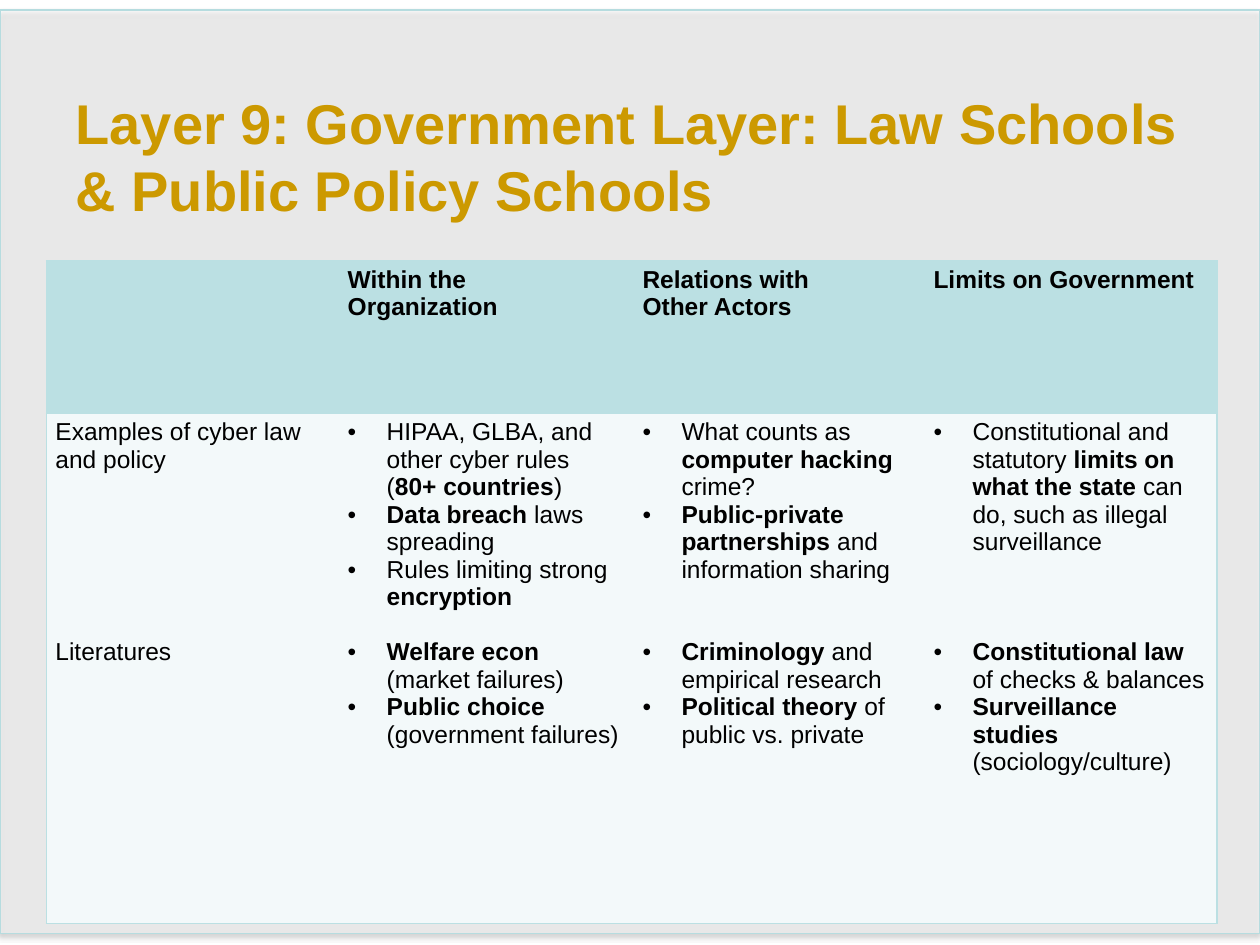
from pptx import Presentation
from pptx.dml.color import RGBColor
from pptx.enum.shapes import MSO_SHAPE
from pptx.enum.text import MSO_ANCHOR, MSO_AUTO_SIZE, PP_ALIGN
from pptx.oxml import parse_xml
from pptx.oxml.ns import nsdecls, qn
from pptx.util import Inches, Pt

RECTANGLE = MSO_SHAPE.RECTANGLE
MIDDLE = MSO_ANCHOR.MIDDLE
NO_FIT = MSO_AUTO_SIZE.NONE
LEFT = PP_ALIGN.LEFT

COLORS = {
    "white": "FFFFFF", "black": "000000", "gold": "CC9900",
    "teal": "BBE0E3", "pale": "F3F9FA", "edge": "B6DCDF",
}
FONT = "Arial"
LINE_PITCH = 15.7
COLUMN_WIDTHS = [2.32, 2.34, 2.31, 2.32]
ROW_HEIGHTS = [1.21, 4.05]

TITLE = "Layer 9: Government Layer: Law Schools & Public Policy Schools"
HEADINGS = [
    [],
    ["Within the", "Organization"],
    ["Relations with", "Other Actors"],
    ["Limits on Government"],
]
ROW_LABELS = ["Examples of cyber law and policy", "Literatures"]
TOPICS = [
    {"examples": ["HIPAA, GLBA, and other cyber rules (**80+ countries**)",
                  "**Data breach **laws spreading",
                  "Rules limiting strong **encryption**"],
     "literatures": ["**Welfare econ **(market failures)",
                     "**Public choice **(government failures)"],
     "gap_lines": 1},
    {"examples": ["What counts as **computer hacking **crime?",
                  "**Public-private partnerships **and information sharing"],
     "literatures": ["**Criminology** and empirical research",
                     "**Political theory **of public vs. private"],
     "gap_lines": 2},
    {"examples": ["Constitutional and statutory **limits on what the state **"
                  "can do, such as illegal surveillance"],
     "literatures": ["**Constitutional law **of checks & balances",
                     "**Surveillance studies** (sociology/culture)"],
     "gap_lines": 3},
]


def rgb(name):
    """Return the named colour."""
    return RGBColor.from_string(COLORS[name])


def add_bullet(para):
    """Give a paragraph a hanging round bullet."""
    props = para._p.get_or_add_pPr()
    props.set("marL", str(Inches(0.31)))
    props.set("indent", str(-Inches(0.31)))
    props.append(parse_xml(f'<a:buFont {nsdecls("a")} typeface="Arial"/>'))
    props.append(parse_xml(f'<a:buChar {nsdecls("a")} char="•"/>'))


def write(frame, text, size=14, color="black", bold=False, bullet=False, before=0, first=False):
    """Write one paragraph, with text between double asterisks in bold."""
    para = frame.paragraphs[0] if first else frame.add_paragraph()
    para.alignment = LEFT
    para.space_before = Pt(before)
    if bullet:
        add_bullet(para)
    for index, piece in enumerate(text.split("**")):
        if piece:
            span = para.add_run()
            span.text = piece
            span.font.name = FONT
            span.font.size = Pt(size)
            span.font.bold = bold or index % 2 == 1
            span.font.color.rgb = rgb(color)


def add_panel(page, left, top, width, height):
    """Draw the translucent shadowed panel behind the content."""
    panel = page.shapes.add_shape(RECTANGLE, left, top, width, height)
    panel.fill.solid()
    panel.fill.fore_color.rgb = rgb("white")
    panel.line.color.rgb = rgb("edge")
    panel.line.width = Pt(0.75)
    panel.shadow.inherit = False
    props = panel.element.spPr
    tint = props.find(qn("a:solidFill")).find(qn("a:srgbClr"))
    tint.append(parse_xml(f'<a:alpha {nsdecls("a")} val="46000"/>'))
    props.find(qn("a:effectLst")).append(parse_xml(
        f'<a:outerShdw {nsdecls("a")} blurRad="{Pt(3.1)}" dist="{Pt(1.8)}" dir="5400000" '
        f'rotWithShape="0"><a:srgbClr val="{COLORS["black"]}"><a:alpha val="35000"/>'
        '</a:srgbClr></a:outerShdw>'))
    page.shapes.title.element.addprevious(panel.element)


def place_title(page, left, top, width, height):
    """Place and fill the title placeholder."""
    title = page.shapes.title
    title.left, title.top, title.width, title.height = left, top, width, height
    frame = title.text_frame
    frame.word_wrap = True
    frame.auto_size = NO_FIT
    frame.vertical_anchor = MIDDLE
    write(frame, TITLE, size=32, color="gold", bold=True, first=True)


def style_cell(cell, fill, sides):
    """Set a cell's margins, its lines on the given sides and its fill."""
    cell.margin_left = cell.margin_right = Inches(0.07)
    cell.margin_top = cell.margin_bottom = Inches(0.04)
    props = cell._tc.get_or_add_tcPr()
    for side in "LRTB":
        paint = "<a:noFill/>"
        if side in sides:
            paint = f'<a:solidFill><a:srgbClr val="{COLORS["teal"]}"/></a:solidFill>'
        props.append(parse_xml(f'<a:ln{side} {nsdecls("a")} w="{Pt(1)}">{paint}</a:ln{side}>'))
    cell.fill.solid()
    cell.fill.fore_color.rgb = rgb(fill)


def add_topic_table(page, left, top, width, height):
    """Add the table of cyber law topics and literatures."""
    table = page.shapes.add_table(2, 4, left, top, width, height).table
    for column, size in zip(table.columns, COLUMN_WIDTHS):
        column.width = Inches(size)
    for row, size in zip(table.rows, ROW_HEIGHTS):
        row.height = Inches(size)
    for row, fill in enumerate(["teal", "pale"]):
        for column, outer in enumerate(["L", "", "", "R"]):
            style_cell(table.cell(row, column), fill, "TB" + outer)
    for column, lines in enumerate(HEADINGS):
        for index, line in enumerate(lines):
            write(table.cell(0, column).text_frame, line, bold=True, first=index == 0)
    labels = table.cell(1, 0).text_frame
    write(labels, ROW_LABELS[0], first=True)
    write(labels, ROW_LABELS[1], before=6 * LINE_PITCH)
    for column, topic in enumerate(TOPICS, start=1):
        frame = table.cell(1, column).text_frame
        for index, text in enumerate(topic["examples"]):
            write(frame, text, bullet=True, first=index == 0)
        for index, text in enumerate(topic["literatures"]):
            gap = topic["gap_lines"] * LINE_PITCH if index == 0 else 0
            write(frame, text, bullet=True, before=gap)


def main():
    """Build and save the deck."""
    deck = Presentation()
    deck.slide_width, deck.slide_height = Inches(10), Inches(7.5)
    page = deck.slides.add_slide(deck.slide_layouts[5])
    add_panel(page, Inches(0), Inches(0.08), Inches(10), Inches(7.33))
    place_title(page, Inches(0.5), Inches(0.92), Inches(9), Inches(0.63))
    add_topic_table(page, Inches(0.37), Inches(2.07), Inches(9.3), Inches(5.26))
    deck.save("out.pptx")


if __name__ == "__main__":
    main()
